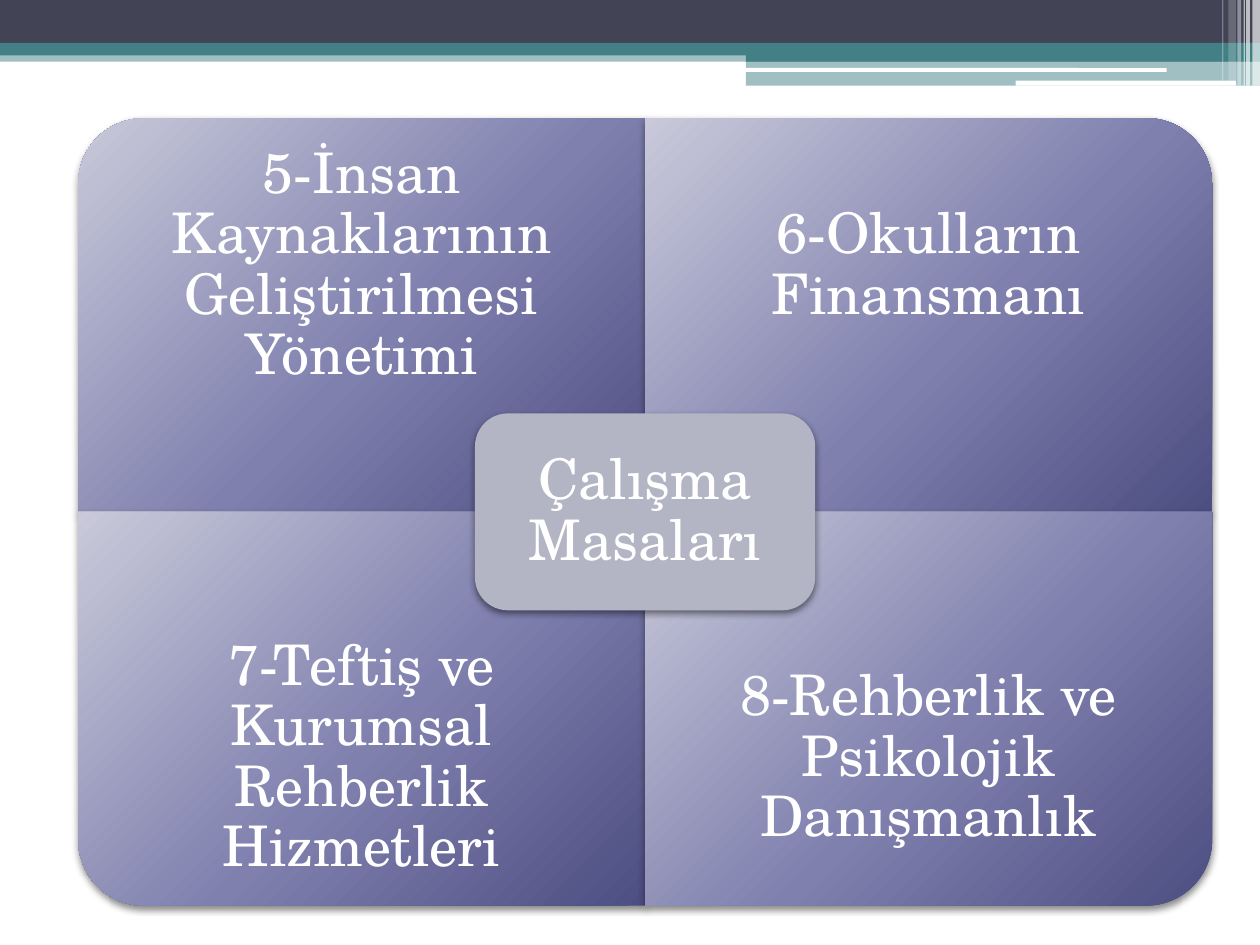
from dataclasses import dataclass

from lxml import etree
from pptx import Presentation
from pptx import util as u
from pptx.dml import color
from pptx.enum import shapes, text
from pptx.oxml import ns

COLORS = {
    "slate": "424456",
    "teal": "438086",
    "white": "FFFFFF",
    "hub": "B3B4C4",
    "light": "C9C9DA",
    "middle": "7F80AE",
    "deep": "4D4E81",
    "shadow": "000000",
}
FONT = "TeX Gyre Schola"
WIDTH, HEIGHT = 10, 7.5
GRID_LEFT, GRID_TOP = 0.62, HEIGHT / 8
CELL_WIDTH, CELL_HEIGHT = WIDTH * 0.45, HEIGHT * 5 / 12
LABEL_SHARE = 0.75
HUB_WIDTH, HUB_HEIGHT = CELL_WIDTH * 0.6, CELL_HEIGHT / 2
GRADIENT = (("light", 0), ("middle", 55), ("deep", 100))
KINDS = shapes.MSO_SHAPE


@dataclass
class Box:
    left: float
    top: float
    width: float
    height: float

    def lengths(self) -> list:
        return [u.Inches(n) for n in (self.left, self.top, self.width, self.height)]


@dataclass
class Band:
    box: Box
    fill: str
    opacity: int = 100
    kind: KINDS = KINDS.RECTANGLE


@dataclass
class Quadrant:
    column: int
    row: int
    turn: int
    label: str


BANDS = [
    Band(Box(0, 0.4, 10, 0.09), "teal", 50),
    Band(Box(0, 0, 10, 0.34), "slate"),
    Band(Box(0, 0.34, 10, 0.1), "teal"),
    Band(Box(5.92, 0.39, 4.08, 0.1), "teal"),
    Band(Box(5.92, 0.48, 4.08, 0.2), "teal", 50),
    Band(Box(5.91, 0.54, 3.35, 0.03), "white", kind=KINDS.ROUNDED_RECTANGLE),
    Band(Box(8.06, 0.64, 1.75, 0.04), "white", kind=KINDS.ROUNDED_RECTANGLE),
] + [
    Band(Box(left, 0, width, height), "white", opacity)
    for left, width, height, opacity in (
        (9.94, 0.06, 0.68, 65),
        (9.89, 0.03, 0.68, 65),
        (9.87, 0.01, 0.68, 60),
        (9.82, 0.03, 0.68, 40),
        (9.75, 0.06, 0.64, 20),
        (9.7, 0.01, 0.64, 30),
    )
]

QUADRANTS = [
    Quadrant(0, 0, 270, "5-İnsan Kaynaklarının Geliştirilmesi Yönetimi"),
    Quadrant(1, 0, 0, "6-Okulların Finansmanı"),
    Quadrant(0, 1, 180, "7-Teftiş ve Kurumsal Rehberlik Hizmetleri"),
    Quadrant(1, 1, 90, "8-Rehberlik ve Psikolojik Danışmanlık"),
]


def add_node(parent, tag: str, **attributes):
    values = {name: str(value) for name, value in attributes.items()}
    return etree.SubElement(parent, ns.qn(f"a:{tag}"), values)


def add_plain_shape(slide, kind: KINDS, box: Box):
    shape = slide.shapes.add_shape(kind, *box.lengths())
    shape.shadow.inherit = False
    shape.line.fill.background()
    return shape


def fill_solid(shape, name: str, opacity: int = 100) -> None:
    shape.fill.solid()
    shape.fill.fore_color.rgb = color.RGBColor.from_string(COLORS[name])
    if opacity < 100:
        tint = shape.fill._xPr.find(".//" + ns.qn("a:srgbClr"))
        add_node(tint, "alpha", val=opacity * 1000)


def fill_radial(shape) -> None:
    properties = shape._element.spPr
    gradient = add_node(properties, "gradFill", rotWithShape=0)
    stops = add_node(gradient, "gsLst")
    for name, position in GRADIENT:
        stop = add_node(stops, "gs", pos=position * 1000)
        add_node(stop, "srgbClr", val=COLORS[name])
    focus = add_node(gradient, "path", path="circle")
    add_node(focus, "fillToRect", l=-40000, t=-90000, r=140000, b=190000)
    properties.find(ns.qn("a:prstGeom")).addnext(gradient)


def cast_shadow(shape) -> None:
    effects = shape._element.spPr.find(ns.qn("a:effectLst"))
    shadow = add_node(effects, "outerShdw", blurRad=u.Pt(4), dist=u.Pt(2),
                      dir=90 * 60000, rotWithShape=0)
    tint = add_node(shadow, "srgbClr", val=COLORS["shadow"])
    add_node(tint, "alpha", val=45000)


def write_label(shape, label: str, inset: float) -> None:
    frame = shape.text_frame
    frame.word_wrap = True
    frame.vertical_anchor = text.MSO_ANCHOR.MIDDLE
    frame.margin_left = frame.margin_right = u.Inches(inset)
    frame.margin_top = frame.margin_bottom = u.Inches(inset)
    paragraph = frame.paragraphs[0]
    paragraph.alignment = text.PP_ALIGN.CENTER
    paragraph.line_spacing = 0.9
    run = paragraph.add_run()
    run.text = label
    run.font.name = FONT
    run.font.size = u.Pt(32)
    run.font.color.rgb = color.RGBColor.from_string(COLORS["white"])


def draw_band(slide, band: Band) -> None:
    shape = add_plain_shape(slide, band.kind, band.box)
    fill_solid(shape, band.fill, band.opacity)


def draw_quadrant(slide, quadrant: Quadrant) -> None:
    left = GRID_LEFT + quadrant.column * CELL_WIDTH
    top = GRID_TOP + quadrant.row * CELL_HEIGHT
    width, height = CELL_WIDTH, CELL_HEIGHT
    if quadrant.turn % 180:
        width, height = height, width
    tile = add_plain_shape(slide, KINDS.ROUND_1_RECTANGLE, Box(
        left + (CELL_WIDTH - width) / 2, top + (CELL_HEIGHT - height) / 2, width, height))
    tile.rotation = quadrant.turn
    fill_radial(tile)
    cast_shadow(tile)

    label_height = CELL_HEIGHT * LABEL_SHARE
    label_top = top + quadrant.row * (CELL_HEIGHT - label_height)
    label_box = Box(left, label_top, CELL_WIDTH, label_height)
    write_label(slide.shapes.add_textbox(*label_box.lengths()), quadrant.label, 0.25)


def draw_hub(slide, label: str) -> None:
    hub = add_plain_shape(slide, KINDS.ROUNDED_RECTANGLE, Box(
        GRID_LEFT + CELL_WIDTH - HUB_WIDTH / 2,
        GRID_TOP + CELL_HEIGHT - HUB_HEIGHT / 2, HUB_WIDTH, HUB_HEIGHT))
    fill_solid(hub, "hub")
    cast_shadow(hub)
    write_label(hub, label, 0.13)


def main() -> None:
    deck = Presentation()
    deck.slide_width, deck.slide_height = u.Inches(WIDTH), u.Inches(HEIGHT)
    slide = deck.slides.add_slide(deck.slide_layouts[6])
    for band in BANDS:
        draw_band(slide, band)
    for quadrant in QUADRANTS:
        draw_quadrant(slide, quadrant)
    draw_hub(slide, "Çalışma Masaları")
    deck.save("out.pptx")


if __name__ == "__main__":
    main()
